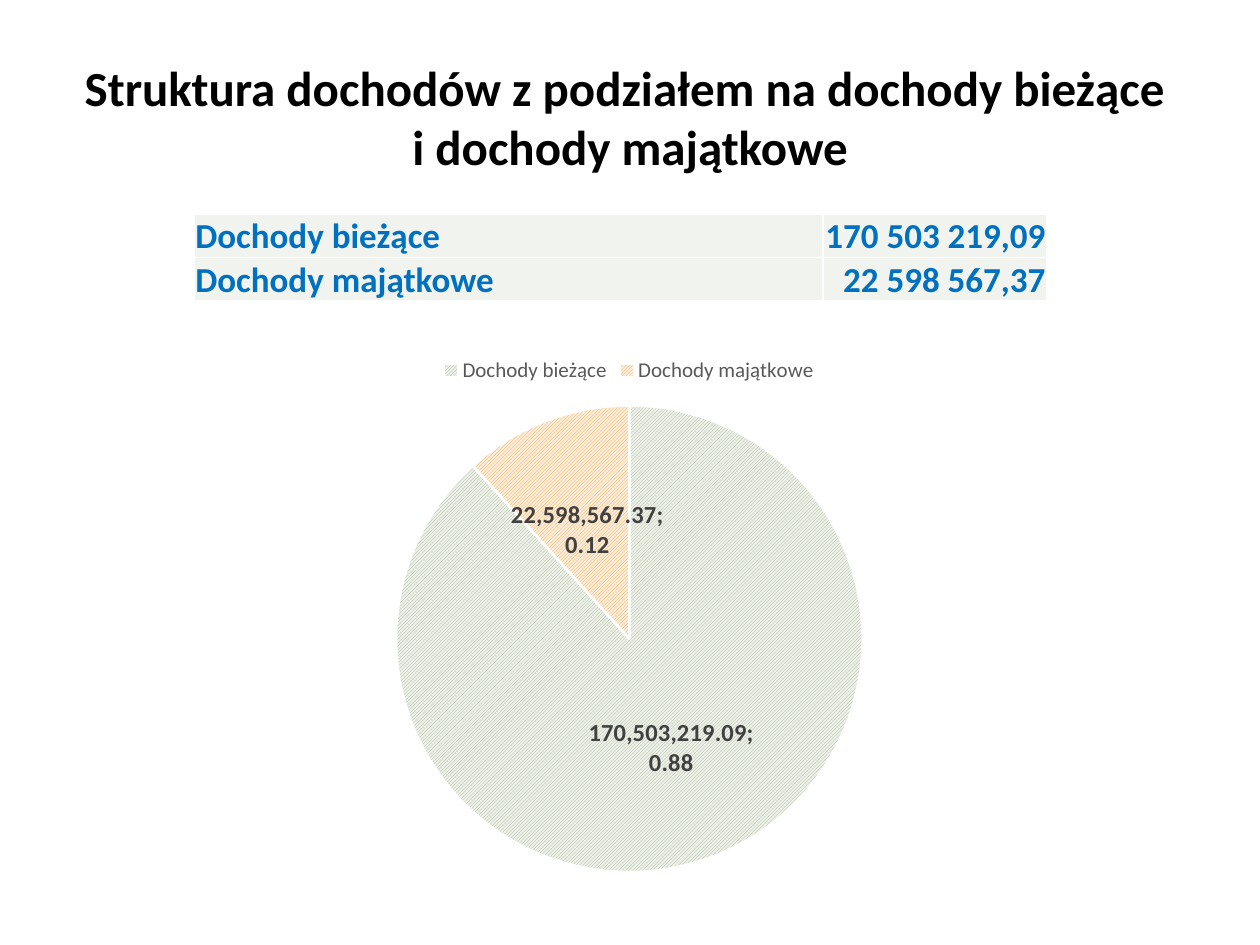
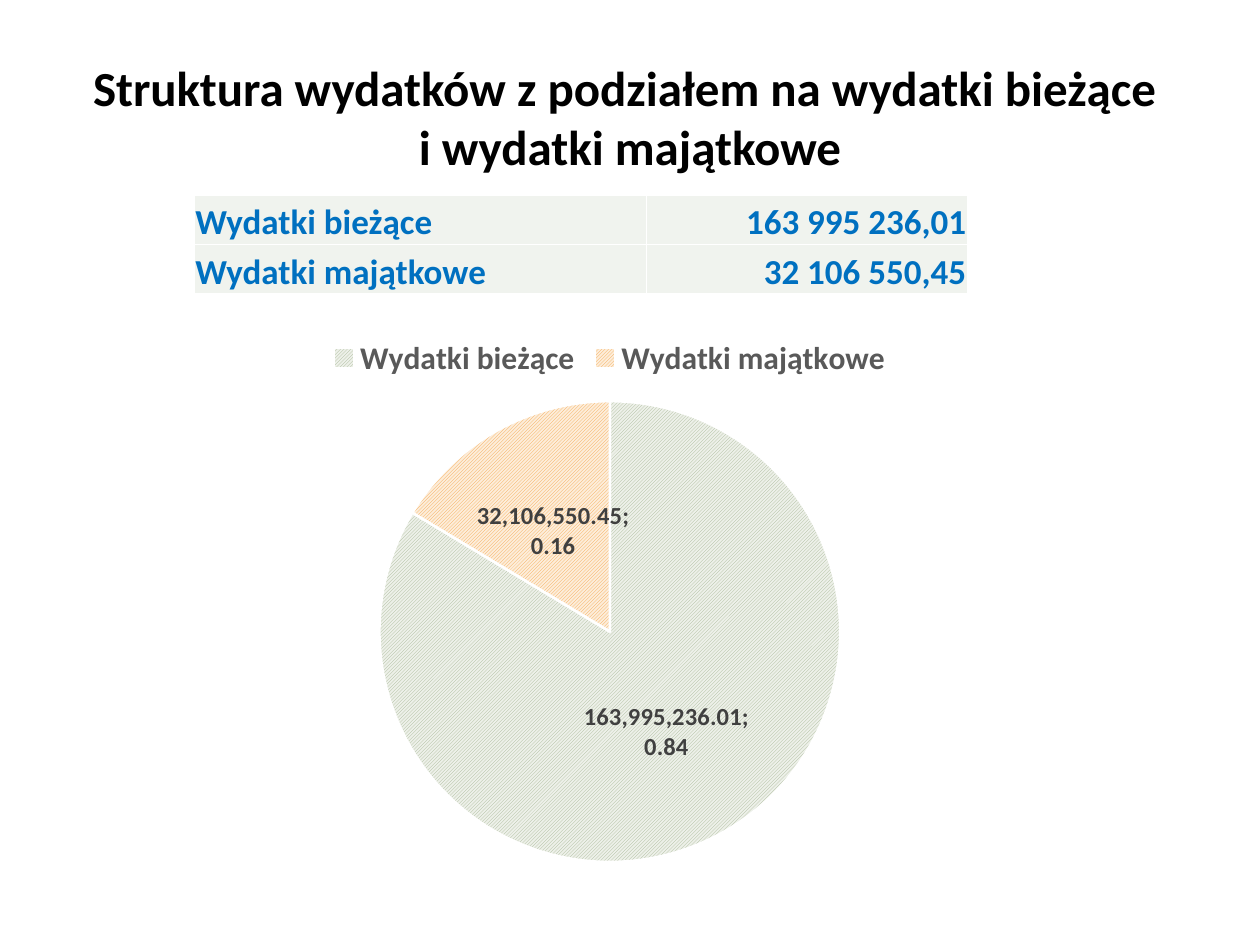
from lxml import etree
from pptx import Presentation
from pptx.chart.data import CategoryChartData
from pptx.dml.color import RGBColor
from pptx.enum.chart import XL_CHART_TYPE, XL_LABEL_POSITION, XL_LEGEND_POSITION
from pptx.enum.dml import MSO_PATTERN
from pptx.enum.text import MSO_ANCHOR, PP_ALIGN
from pptx.oxml import parse_xml
from pptx.oxml.ns import nsdecls, qn
from pptx.util import Inches, Pt

SLIDES = [
    {
        "title": "Struktura dochodów z podziałem na dochody bieżące \ni dochody majątkowe",
        "rows": [("Dochody bieżące", 170503219.09), ("Dochody majątkowe", 22598567.37)],
        "table_top": 1.7, "columns": (4.99, 1.78), "row_height": 0.34,
        "chart_box": (0.98, 2.73, 8.03, 4.33),
        "legend": {"size": 12, "bold": False},
    },
    {
        "title": "Struktura wydatków z podziałem na wydatki bieżące \ni wydatki majątkowe",
        "rows": [("Wydatki bieżące", 163995236.01), ("Wydatki majątkowe", 32106550.45)],
        "table_top": 1.55, "columns": (3.59, 2.55), "row_height": 0.39,
        "chart_box": (1.22, 2.57, 7.24, 4.41),
        "legend": {"size": 18, "bold": True},
    },
]

FONT = "Calibri"
BLACK = RGBColor(0x00, 0x00, 0x00)
WHITE = RGBColor(0xFF, 0xFF, 0xFF)
BLUE = RGBColor(0x00, 0x70, 0xC0)
CELL_FILL = RGBColor(0xF0, 0xF3, 0xEE)
LEGEND_GREY = RGBColor(0x59, 0x59, 0x59)
LABEL_GREY = RGBColor(0x40, 0x40, 0x40)
SLICE_COLOURS = [
    (RGBColor(0xA5, 0xB5, 0x92), RGBColor(0xED, 0xF0, 0xE9)),
    (RGBColor(0xF3, 0xA4, 0x47), RGBColor(0xFD, 0xED, 0xDA)),
]

LEFT, CENTER, RIGHT = PP_ALIGN.LEFT, PP_ALIGN.CENTER, PP_ALIGN.RIGHT
MIDDLE, BOTTOM = MSO_ANCHOR.MIDDLE, MSO_ANCHOR.BOTTOM
HATCH = MSO_PATTERN.LIGHT_UPWARD_DIAGONAL

TITLE_BOX = (0.5, 0.3, 9, 1.25)
TABLE_LEFT = 1.54
CELL_INSET = 0.01
NUMBER_FORMAT = "#,##0.00"


def polish_number(value):
    return f"{value:,.2f}".replace(",", " ").replace(".", ",")


def format_font(font, size, color, bold=False):
    font.name = FONT
    font.size = Pt(size)
    font.bold = bold
    font.color.rgb = color


def write_text(tf, text, size, color, bold=True, align=LEFT):
    p = tf.paragraphs[0]
    p.alignment = align
    for i, line in enumerate(text.split("\n")):
        if i:
            p.add_line_break()
        r = p.add_run()
        r.text = line
        format_font(r.font, size, color, bold)


def add_title(slide, text):
    sp = slide.shapes.add_textbox(*map(Inches, TITLE_BOX))
    tf = sp.text_frame
    tf.word_wrap = True
    tf.vertical_anchor = MIDDLE
    write_text(tf, text, size=28, color=BLACK, align=CENTER)


def add_borders(cell):
    tc_pr = cell._tc.get_or_add_tcPr()
    for side in ("lnL", "lnR", "lnT", "lnB"):
        tc_pr.append(parse_xml(
            f'<a:{side} {nsdecls("a")} w="{Pt(1)}"><a:solidFill>'
            f'<a:srgbClr val="{WHITE}"/></a:solidFill></a:{side}>'))


def add_amounts_table(slide, rows, top, columns, row_height):
    table = slide.shapes.add_table(
        len(rows), len(columns), Inches(TABLE_LEFT), Inches(top),
        Inches(sum(columns)), Inches(row_height * len(rows))).table
    table.first_row = table.horz_banding = False
    for column, width in zip(table.columns, columns):
        column.width = Inches(width)
    for r, (name, value) in enumerate(rows):
        table.rows[r].height = Inches(row_height)
        for c, (text, align) in enumerate([(name, LEFT), (polish_number(value), RIGHT)]):
            cell = table.cell(r, c)
            cell.margin_left = cell.margin_right = cell.margin_top = Inches(CELL_INSET)
            cell.margin_bottom = 0
            cell.vertical_anchor = BOTTOM
            add_borders(cell)
            cell.fill.solid()
            cell.fill.fore_color.rgb = CELL_FILL
            write_text(cell.text_frame, text, size=20, color=BLUE, align=align)


def format_labels(plot):
    plot.has_data_labels = True
    labels = plot.data_labels
    labels.show_value = labels.show_percentage = True
    labels.number_format = NUMBER_FORMAT
    labels.number_format_is_linked = False
    labels.position = XL_LABEL_POSITION.CENTER
    format_font(labels.font, 14, LABEL_GREY, bold=True)
    element = labels._element
    element.find(".//" + qn("a:bodyPr")).set("wrap", "square")
    separator = etree.Element(qn("c:separator"))
    separator.text = "; "
    last_flag = [e for e in element if e.tag in (qn("c:showPercent"), qn("c:showBubbleSize"))][-1]
    last_flag.addnext(separator)


def add_pie(slide, rows, box, legend):
    data = CategoryChartData(number_format=NUMBER_FORMAT)
    data.categories = [name for name, _ in rows]
    data.add_series("Series 1", [value for _, value in rows])
    chart = slide.shapes.add_chart(XL_CHART_TYPE.PIE, *map(Inches, box), data).chart
    format_font(chart.font, 10, BLACK)
    chart.has_title = False
    chart.has_legend = True
    chart.legend.position = XL_LEGEND_POSITION.TOP
    chart.legend.include_in_layout = False
    format_font(chart.legend.font, color=LEGEND_GREY, **legend)

    plot = chart.plots[0]
    plot.vary_by_categories = True
    for i, (stripe, ground) in enumerate(SLICE_COLOURS):
        slice_format = plot.series[0].points[i].format
        fill = slice_format.fill
        fill.patterned()
        fill.pattern = HATCH
        fill.fore_color.rgb = stripe
        fill.back_color.rgb = ground
        slice_format.line.color.rgb = WHITE
        slice_format.line.width = Pt(1.5)
    format_labels(plot)


def main():
    prs = Presentation()
    prs.slide_width, prs.slide_height = Inches(10), Inches(7.5)
    for content in SLIDES:
        slide = prs.slides.add_slide(prs.slide_layouts[6])
        rows = content["rows"]
        add_title(slide, content["title"])
        add_amounts_table(slide, rows, content["table_top"],
                          content["columns"], content["row_height"])
        add_pie(slide, rows, content["chart_box"], content["legend"])
    prs.save("out.pptx")


if __name__ == "__main__":
    main()
